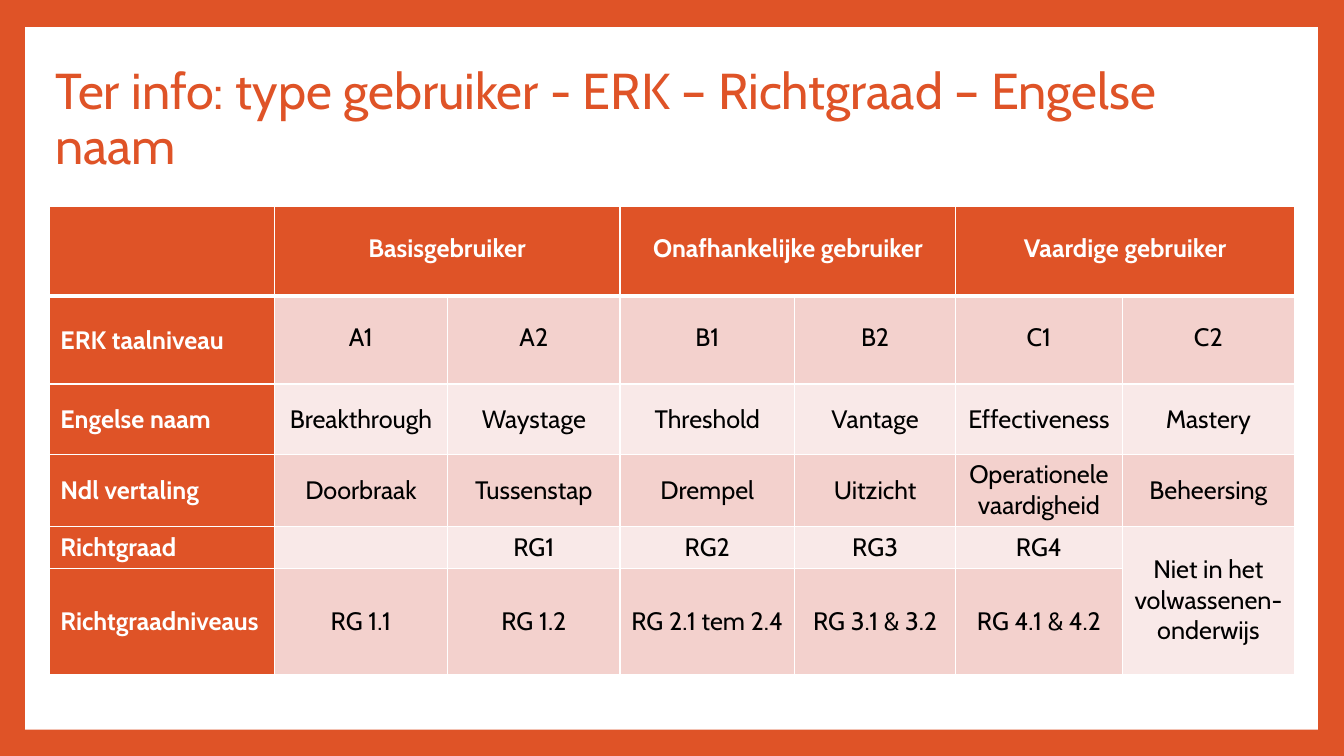
from dataclasses import dataclass

from lxml.etree import SubElement
from pptx import Presentation
from pptx.dml.color import RGBColor
from pptx.enum.shapes import MSO_SHAPE
from pptx.enum.text import MSO_ANCHOR, PP_ALIGN
from pptx.oxml.ns import qn
from pptx.util import Inches, Pt

TITLE = "Ter info: type gebruiker - ERK – Richtgraad – Engelse naam"
ROWS = [
    ["", "Basisgebruiker", "", "Onafhankelijke gebruiker", "", "Vaardige gebruiker", ""],
    ["ERK taalniveau", "A1", "A2", "B1", "B2", "C1", "C2"],
    ["Engelse naam", "Breakthrough", "Waystage", "Threshold", "Vantage", "Effectiveness", "Mastery"],
    ["Ndl vertaling", "Doorbraak", "Tussenstap", "Drempel", "Uitzicht",
     "Operationele vaardigheid", "Beheersing"],
    ["Richtgraad", "", "RG1", "RG2", "RG3", "RG4", "Niet in het\nvolwassenen-\nonderwijs"],
    ["Richtgraadniveaus", "RG 1.1", "RG 1.2", "RG 2.1 tem 2.4", "RG 3.1 & 3.2", "RG 4.1 & 4.2", ""],
]
MERGES = [((0, 1), (0, 2)), ((0, 3), (0, 4)), ((0, 5), (0, 6)), ((4, 6), (5, 6))]
COLUMN_WIDTHS = [2.23, 1.72, 1.71, 1.73, 1.6, 1.65, 1.71]
ROW_HEIGHTS = [0.89, 0.87, 0.7, 0.71, 0.42, 1.05]
LABEL_INDENT = 0.11


@dataclass(frozen=True)
class Theme:
    font: str = "Cabin"
    accent: str = "DF5327"
    white: str = "FFFFFF"
    black: str = "000000"
    band_dark: str = "F3D1CD"
    band_light: str = "F9E9E8"
    title_size: int = 36
    table_size: int = 18
    thin: int = 1
    thick: int = 3


THEME = Theme()


def paint(fill, color):
    fill.solid()
    fill.fore_color.rgb = RGBColor.from_string(color)


def style_font(font, size, color, bold=False):
    font.name = THEME.font
    font.size = Pt(size)
    font.bold = bold
    font.color.rgb = RGBColor.from_string(color)


def add_borders(cell, row):
    properties = cell._tc.get_or_add_tcPr()
    widths = {
        "a:lnL": THEME.thin,
        "a:lnR": THEME.thin,
        "a:lnT": THEME.thick if row == 1 else THEME.thin,
        "a:lnB": THEME.thick if row == 0 else THEME.thin,
    }
    for tag, width in widths.items():
        line = SubElement(properties, qn(tag), w=str(Pt(width)))
        fill = SubElement(line, qn("a:solidFill"))
        SubElement(fill, qn("a:srgbClr"), val=THEME.white)


def fill_cell(cell, text, row, column):
    is_label = column == 0
    is_heading = row == 0 or is_label
    band = THEME.band_dark if row % 2 else THEME.band_light
    add_borders(cell, row)
    paint(cell.fill, THEME.accent if is_heading else band)
    cell.vertical_anchor = MSO_ANCHOR.MIDDLE
    cell.margin_left = Inches(LABEL_INDENT if is_label else 0)
    cell.margin_right = cell.margin_top = cell.margin_bottom = 0
    color = THEME.white if is_heading else THEME.black
    paragraph = cell.text_frame.paragraphs[0]
    paragraph.alignment = PP_ALIGN.LEFT if is_label else PP_ALIGN.CENTER
    if row < 2 and not is_label:
        paragraph.line_spacing = Pt(18)
        paragraph.space_after = Pt(7.5)
    if not text:
        style_font(paragraph.font, THEME.table_size, color)
        return
    for index, part in enumerate(text.split("\n")):
        if index:
            paragraph.add_line_break()
        run = paragraph.add_run()
        run.text = part
        style_font(run.font, THEME.table_size, color, is_heading)


def add_panel(slide):
    panel = slide.shapes.add_shape(
        MSO_SHAPE.RECTANGLE, Inches(0.25), Inches(0.27), Inches(12.82), Inches(6.97))
    panel.shadow.inherit = False
    paint(panel.fill, THEME.white)
    panel.line.fill.background()


def add_title(slide):
    box = slide.shapes.add_textbox(Inches(0.45), Inches(0.82), Inches(12.32), Inches(0.75))
    frame = box.text_frame
    frame.word_wrap = True
    frame.vertical_anchor = MSO_ANCHOR.MIDDLE
    paragraph = frame.paragraphs[0]
    paragraph.line_spacing = 0.9
    run = paragraph.add_run()
    run.text = TITLE
    style_font(run.font, THEME.title_size, THEME.accent)


def add_level_table(slide):
    table = slide.shapes.add_table(
        len(ROWS), len(COLUMN_WIDTHS), Inches(0.49), Inches(2.05),
        Inches(sum(COLUMN_WIDTHS)), Inches(sum(ROW_HEIGHTS))).table
    for column, width in zip(table.columns, COLUMN_WIDTHS):
        column.width = Inches(width)
    for row, height in zip(table.rows, ROW_HEIGHTS):
        row.height = Inches(height)
    for row, texts in enumerate(ROWS):
        for column, text in enumerate(texts):
            fill_cell(table.cell(row, column), text, row, column)
    for first, last in MERGES:
        table.cell(*first).merge(table.cell(*last))


def main():
    presentation = Presentation()
    presentation.slide_width = Inches(13.33)
    presentation.slide_height = Inches(7.5)
    slide = presentation.slides.add_slide(presentation.slide_layouts[6])
    paint(slide.background.fill, THEME.accent)
    add_panel(slide)
    add_title(slide)
    add_level_table(slide)
    presentation.save("out.pptx")


if __name__ == "__main__":
    main()
